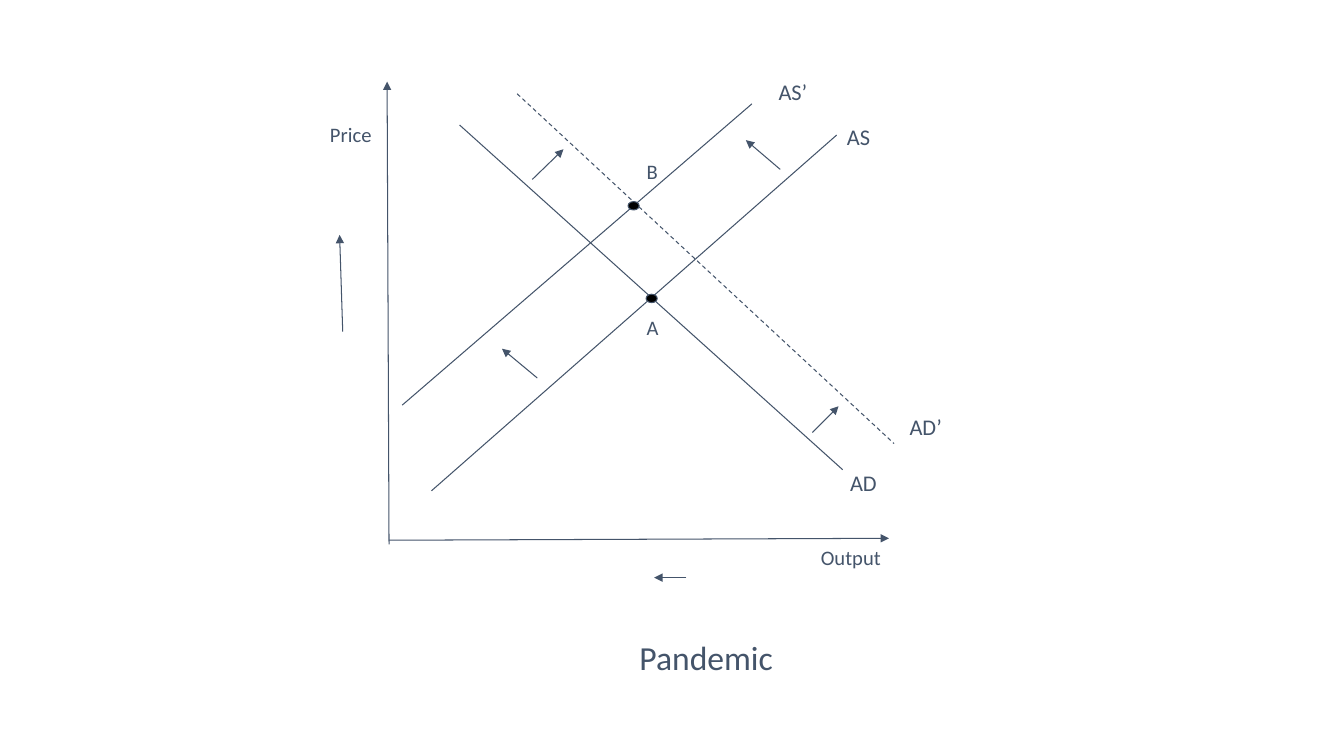
from dataclasses import dataclass

from lxml import etree
from pptx import Presentation
from pptx.dml.color import RGBColor
from pptx.enum.dml import MSO_LINE
from pptx.enum.shapes import MSO_CONNECTOR, MSO_SHAPE
from pptx.enum.text import MSO_ANCHOR, PP_ALIGN
from pptx.oxml.ns import qn
from pptx.util import Pt

STRAIGHT = MSO_CONNECTOR.STRAIGHT
ELLIPSE = MSO_SHAPE.OVAL
DASH = MSO_LINE.DASH
TOP = MSO_ANCHOR.TOP
LEFT, CENTER = PP_ALIGN.LEFT, PP_ALIGN.CENTER


@dataclass(frozen=True)
class Theme:
    ink: RGBColor = RGBColor(0x44, 0x54, 0x6A)
    dot: RGBColor = RGBColor(0, 0, 0)
    font: str = "Calibri"
    small: float = 14.7
    curve: float = 16
    title: float = 24
    line: float = 0.75
    inset: float = 9.6


@dataclass(frozen=True)
class Line:
    x1: float
    y1: float
    x2: float
    y2: float
    arrow: bool = False
    dashed: bool = False


@dataclass(frozen=True)
class Label:
    text: str
    x: float
    y: float
    width: float
    size: float
    height: float = 21
    align: PP_ALIGN = LEFT


@dataclass(frozen=True)
class Point:
    x: float
    y: float
    width: float = 8
    height: float = 6


THEME = Theme()

AXES = [
    Line(277.9, 388.8, 276.5, 58.3, arrow=True),
    Line(277.9, 385.9, 635, 384.5, arrow=True),
]
CURVES = [
    Line(308.2, 350.6, 597.6, 96.5),
    Line(328.3, 89.3, 601.9, 335.5),
    Line(287.3, 289.4, 537.1, 74.2),
    Line(369.4, 67, 638.6, 316.8, dashed=True),
]
SHIFTS = [
    Line(557.3, 121, 532.8, 100.1, arrow=True),
    Line(383.8, 270, 358.6, 249.1, arrow=True),
    Line(580.3, 308.9, 599, 290.2, arrow=True),
    Line(380.2, 128.2, 402.5, 106.6, arrow=True),
    Line(244.8, 236.9, 242.6, 167.8, arrow=True),
    Line(490.3, 412.6, 467.3, 412.6, arrow=True),
]
EQUILIBRIA = [Point(461.5, 210.2), Point(448.6, 144)]
LABELS = [
    Label("Price", 226.1, 78.5, 101.5, THEME.small),
    Label("Output", 576.7, 380.2, 92.9, THEME.small),
    Label("AS", 595.4, 78.5, 51.1, THEME.curve),
    Label("AD", 597.6, 325.4, 51.1, THEME.curve),
    Label("AD’", 640.1, 285.8, 51.1, THEME.curve),
    Label("AS’", 546.5, 46.1, 51.1, THEME.curve),
    Label("A", 452.2, 216, 25.2, THEME.small),
    Label("B", 452.2, 104.4, 25.2, THEME.small),
    Label("Pandemic", 59.8, 445, 889.2, THEME.title, 29.5, CENTER),
]


def draw_line(s, line: Line) -> None:
    c = s.shapes.add_connector(
        STRAIGHT, Pt(line.x1), Pt(line.y1), Pt(line.x2), Pt(line.y2))
    c.line.color.rgb = THEME.ink
    c.line.width = Pt(THEME.line)
    if line.dashed:
        c.line.dash_style = DASH
    if line.arrow:
        etree.SubElement(c.line._get_or_add_ln(), qn("a:tailEnd"), type="triangle")
    etree.SubElement(c._element.spPr, qn("a:effectLst"))


def draw_point(s, point: Point) -> None:
    sp = s.shapes.add_shape(
        ELLIPSE, Pt(point.x), Pt(point.y), Pt(point.width), Pt(point.height))
    sp.shadow.inherit = False
    sp.fill.solid()
    sp.fill.fore_color.rgb = THEME.dot
    sp.line.color.rgb = THEME.ink
    sp.line.width = Pt(THEME.line)


def draw_label(s, label: Label) -> None:
    sp = s.shapes.add_textbox(
        Pt(label.x), Pt(label.y), Pt(label.width), Pt(label.height))
    tf = sp.text_frame
    tf.word_wrap = True
    tf.vertical_anchor = TOP
    tf.margin_left = tf.margin_right = Pt(THEME.inset)
    tf.margin_top = tf.margin_bottom = Pt(THEME.inset)
    tf.text = label.text
    p = tf.paragraphs[0]
    p.alignment = label.align
    font = p.runs[0].font
    font.name = THEME.font
    font.size = Pt(label.size)
    font.color.rgb = THEME.ink


def main() -> None:
    prs = Presentation()
    prs.slide_width, prs.slide_height = Pt(960), Pt(540)
    s = prs.slides.add_slide(prs.slide_layouts[6])
    for line in AXES + CURVES + SHIFTS:
        draw_line(s, line)
    for point in EQUILIBRIA:
        draw_point(s, point)
    for label in LABELS:
        draw_label(s, label)
    prs.save("out.pptx")


if __name__ == "__main__":
    main()
